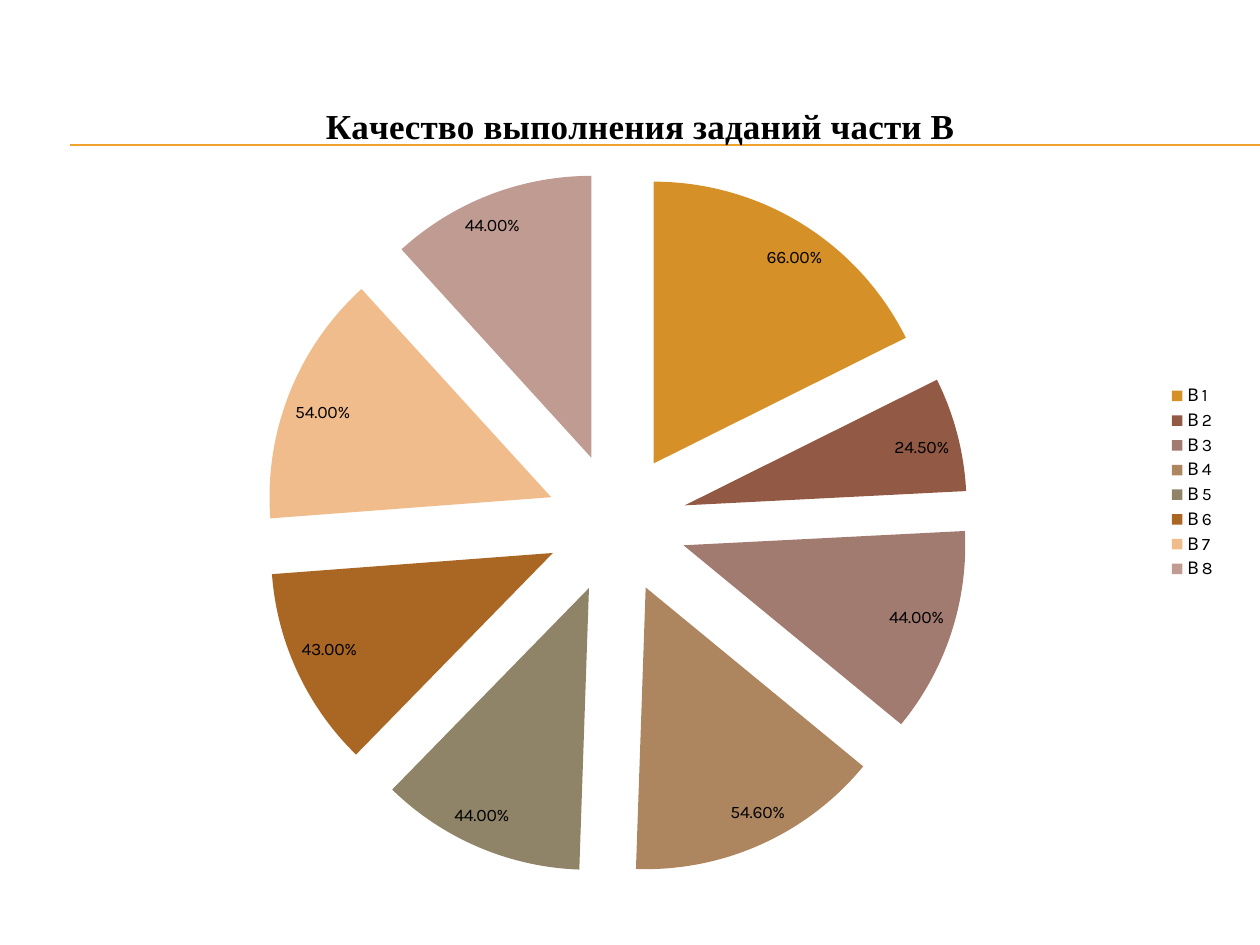
from dataclasses import dataclass

from lxml.etree import SubElement
from pptx import Presentation
from pptx.chart.chart import Chart
from pptx.chart.data import CategoryChartData
from pptx.dml.color import RGBColor
from pptx.enum.chart import XL_CHART_TYPE, XL_LABEL_POSITION, XL_LEGEND_POSITION
from pptx.enum.shapes import MSO_CONNECTOR
from pptx.oxml import parse_xml
from pptx.oxml.ns import nsdecls, qn
from pptx.slide import Slide
from pptx.util import Cm, Pt


@dataclass(frozen=True)
class Theme:
    rule: str = "F0A22E"
    text: str = "000000"
    body_font: str = "Karla"
    title_font: str = "Times New Roman"
    body_size: int = 10
    title_size: int = 20
    rule_width: float = 0.75


@dataclass(frozen=True)
class Task:
    name: str
    quality: float
    color: str


THEME = Theme()
TITLE = "Качество выполнения заданий части В"
TASKS = [
    Task("В 1", 0.66, "D59127"),
    Task("В 2", 0.245, "925944"),
    Task("В 3", 0.44, "A17A70"),
    Task("В 4", 0.546, "AD8660"),
    Task("В 5", 0.44, "8F8467"),
    Task("В 6", 0.43, "AA6724"),
    Task("В 7", 0.54, "F1BC8B"),
    Task("В 8", 0.44, "BF9B92"),
]
RULE_HEIGHTS = (2.92, 2.93)
EXPLOSION = 25


def add_rule(slide: Slide, top: float) -> None:
    rule = slide.shapes.add_connector(
        MSO_CONNECTOR.STRAIGHT, Cm(1.42), Cm(top), Cm(25.4), Cm(top)
    )
    rule.line.color.rgb = RGBColor.from_string(THEME.rule)
    rule.line.width = Pt(THEME.rule_width)
    SubElement(rule.element.spPr, qn("a:effectLst"))


def place(chart: Chart, tag: str, **fractions: float) -> None:
    """Give a chart part a manual layout in fractions of the chart area."""
    part = chart.element.xpath(f".//{tag}")[0]
    for layout in part.findall(qn("c:layout")):
        part.remove(layout)
    target = '<c:layoutTarget val="inner"/>' if tag == "c:plotArea" else ""
    values = "".join(f'<c:{key} val="{value}"/>' for key, value in fractions.items())
    layout = parse_xml(
        f'<c:layout {nsdecls("c")}><c:manualLayout>{target}'
        f'<c:xMode val="edge"/><c:yMode val="edge"/>{values}'
        "</c:manualLayout></c:layout>"
    )
    text = part.find(qn("c:tx"))
    if text is None:
        part.insert(0, layout)
    else:
        text.addnext(layout)


def set_title(chart: Chart) -> None:
    chart.has_title = True
    para = chart.chart_title.text_frame.paragraphs[0]
    para.text = TITLE
    font = para.runs[0].font
    font.name = THEME.title_font
    font.size = Pt(THEME.title_size)
    font.bold = True
    font.color.rgb = RGBColor.from_string(THEME.text)
    place(chart, "c:title", x=0.22, y=0.03)


def style_slices(chart: Chart) -> None:
    plot = chart.plots[0]
    plot.vary_by_categories = True
    for index, task in enumerate(TASKS):
        fill = plot.series[0].points[index].format.fill
        fill.solid()
        fill.fore_color.rgb = RGBColor.from_string(task.color)
    first_point = chart.element.xpath(".//c:ser/c:dPt")[0]
    first_point.addprevious(
        parse_xml(f'<c:explosion {nsdecls("c")} val="{EXPLOSION}"/>')
    )
    plot.has_data_labels = True
    labels = plot.data_labels
    labels.show_value = True
    labels.show_percentage = False
    labels.number_format = "0.00%"
    labels.number_format_is_linked = False
    labels.position = XL_LABEL_POSITION.BEST_FIT


def add_quality_chart(slide: Slide) -> None:
    data = CategoryChartData(number_format="0.00%")
    data.categories = [task.name for task in TASKS]
    data.add_series("Series 1", [task.quality for task in TASKS])
    chart = slide.shapes.add_chart(
        XL_CHART_TYPE.PIE, Cm(1.27), Cm(1.47), Cm(23.5), Cm(16.51), data
    ).chart
    chart.font.name = THEME.body_font
    chart.font.size = Pt(THEME.body_size)
    chart.font.color.rgb = RGBColor.from_string(THEME.text)
    set_title(chart)
    style_slices(chart)
    place(chart, "c:plotArea", x=0.17, y=0.12, w=0.61, h=0.86)
    chart.has_legend = True
    chart.legend.position = XL_LEGEND_POSITION.RIGHT
    chart.legend.include_in_layout = False


def main() -> None:
    deck = Presentation()
    deck.slide_width, deck.slide_height = Cm(25.4), Cm(19.05)
    page = deck.slides.add_slide(deck.slide_layouts[6])
    for top in RULE_HEIGHTS:
        add_rule(page, top)
    add_quality_chart(page)
    deck.save("out.pptx")


if __name__ == "__main__":
    main()
